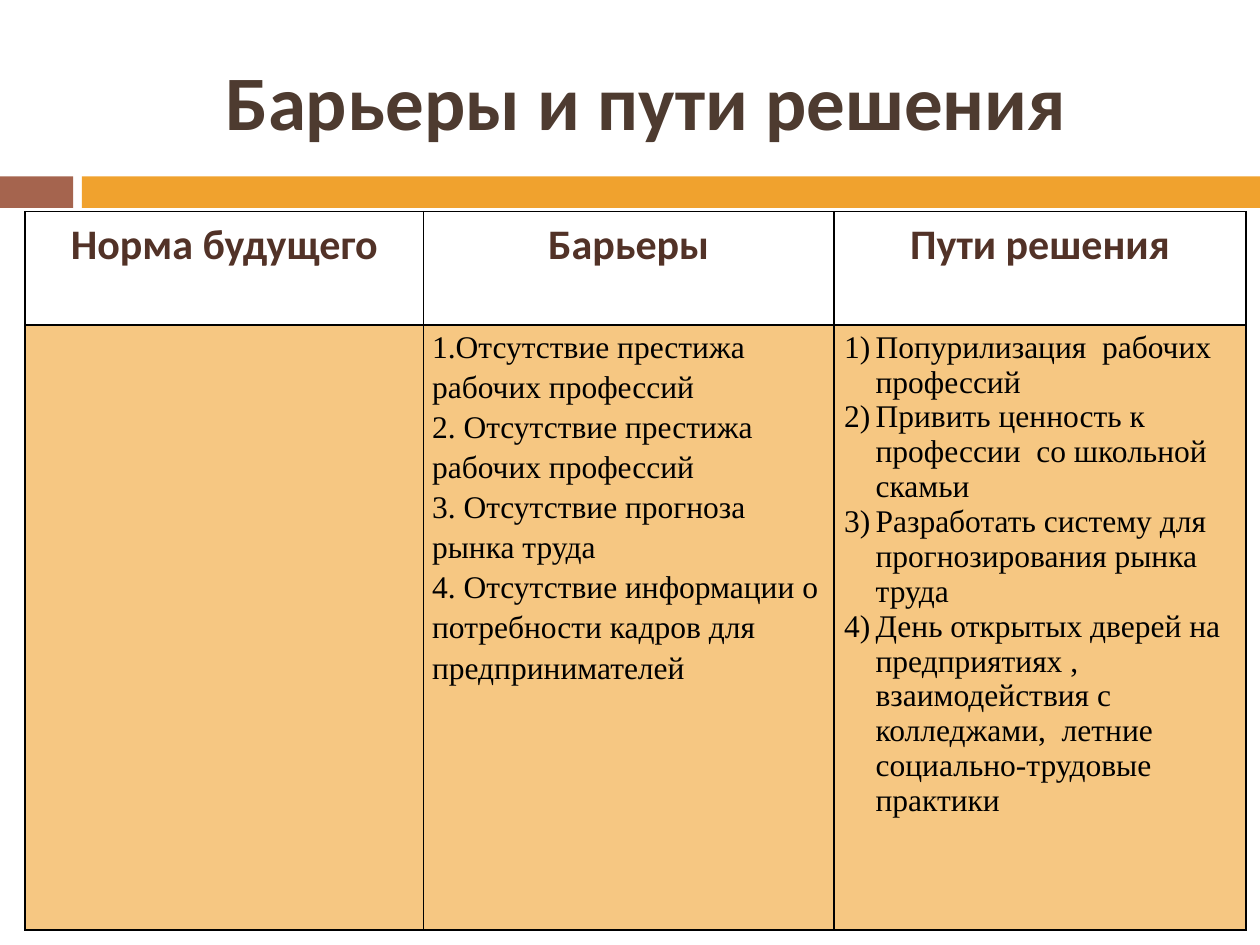
from lxml import etree
from pptx import Presentation
from pptx.dml.color import RGBColor
from pptx.enum.shapes import MSO_SHAPE
from pptx.enum.text import MSO_ANCHOR, PP_ALIGN
from pptx.oxml.ns import qn
from pptx.util import Inches, Pt

RECTANGLE = MSO_SHAPE.RECTANGLE
MIDDLE = MSO_ANCHOR.MIDDLE
CENTER, LEFT = PP_ALIGN.CENTER, PP_ALIGN.LEFT

COLORS = {"brick": "A5644E", "amber": "F0A22E", "title": "4E3B30",
          "header": "523227", "body": "000000", "sand": "F6C782", "border": "000000"}
FORMATS = {
    "title": {"size": Pt(44), "name": "Calibri", "bold": True},
    "header": {"size": Pt(24), "name": "Calibri", "bold": True},
    "body": {"size": Pt(18), "name": "Times New Roman", "bold": False},
}
COLUMN_WIDTHS = [3.16, 3.26, 3.27]
ROW_HEIGHTS = [0.9, 4.8]
HEADERS = ["Норма будущего", "Барьеры", "Пути решения"]
BARRIERS = [
    "1.Отсутствие престижа рабочих профессий",
    "2. Отсутствие престижа рабочих профессий",
    "3. Отсутствие прогноза рынка труда",
    "4. Отсутствие информации о потребности кадров для предпринимателей",
]
SOLUTIONS = [
    "Попурилизация  рабочих профессий",
    "Привить ценность к профессии  со школьной скамьи",
    "Разработать систему для прогнозирования рынка труда",
    "День открытых дверей на предприятиях , взаимодействия с колледжами,  "
    "летние социально-трудовые практики",
]


def write_lines(frame, lines, style, align, spacing):
    """Fill a text frame with one paragraph per line in the named style."""
    for index, line in enumerate(lines):
        paragraph = frame.add_paragraph() if index else frame.paragraphs[0]
        paragraph.alignment = align
        paragraph.line_spacing = spacing
        run = paragraph.add_run()
        run.text = line
        for attribute, value in FORMATS[style].items():
            setattr(run.font, attribute, value)
        run.font.color.rgb = RGBColor.from_string(COLORS[style])


def add_borders(cell):
    properties = cell._tc.get_or_add_tcPr()
    for position, side in enumerate(("lnL", "lnR", "lnT", "lnB")):
        line = etree.Element(qn(f"a:{side}"), w=str(Pt(1)))
        fill = etree.SubElement(line, qn("a:solidFill"))
        etree.SubElement(fill, qn("a:srgbClr"), val=COLORS["border"])
        properties.insert(position, line)


presentation = Presentation()
presentation.slide_width, presentation.slide_height = Inches(10), Inches(7.5)
slide = presentation.slides.add_slide(presentation.slide_layouts[6])

# Divider band
for left, width, color in [(0, 0.58, "brick"), (0.65, 9.35, "amber")]:
    band = slide.shapes.add_shape(RECTANGLE, Inches(left), Inches(1.4), Inches(width), Inches(0.25))
    band.shadow.inherit = False
    band.fill.solid()
    band.fill.fore_color.rgb = RGBColor.from_string(COLORS[color])
    band.line.fill.background()

# Title
title = slide.shapes.add_textbox(Inches(0.67), Inches(0.25), Inches(8.92), Inches(1.08)).text_frame
title.word_wrap = True
title.vertical_anchor = MIDDLE
write_lines(title, ["Барьеры и пути решения"], "title", CENTER, 1.0)

# Table
table = slide.shapes.add_table(
    len(ROW_HEIGHTS), len(COLUMN_WIDTHS), Inches(0.2), Inches(1.68),
    Inches(sum(COLUMN_WIDTHS)), Inches(sum(ROW_HEIGHTS))).table
table.first_row = table.horz_banding = False
for column, width in zip(table.columns, COLUMN_WIDTHS):
    column.width = Inches(width)
for row, height in zip(table.rows, ROW_HEIGHTS):
    row.height = Inches(height)

# Each entry: lines, style, alignment, line spacing, side and top margins
rows = [
    [([header], "header", CENTER, 1.15, 0.06, 0) for header in HEADERS],
    [([], "body", LEFT, 1.0, 0.08, 0.04),
     (BARRIERS, "body", LEFT, 1.15, 0.07, 0),
     (SOLUTIONS, "body", LEFT, 1.0, 0.08, 0.04)],
]
for row_index, entries in enumerate(rows):
    for column_index, (lines, style, align, spacing, side, top) in enumerate(entries):
        cell = table.cell(row_index, column_index)
        cell.margin_left = cell.margin_right = Inches(side)
        cell.margin_top = cell.margin_bottom = Inches(top)
        if style == "body":
            cell.fill.solid()
            cell.fill.fore_color.rgb = RGBColor.from_string(COLORS["sand"])
        else:
            cell.fill.background()
        add_borders(cell)
        write_lines(cell.text_frame, lines, style, align, spacing)

# Automatic numbering of the solutions
for paragraph in table.cell(1, 2).text_frame.paragraphs:
    properties = paragraph._p.get_or_add_pPr()
    properties.set("marL", str(Inches(0.25)))
    properties.set("indent", str(-Inches(0.25)))
    etree.SubElement(properties, qn("a:buFont"), typeface="+mj-lt")
    etree.SubElement(properties, qn("a:buAutoNum"), type="arabicParenR")

presentation.save("out.pptx")
